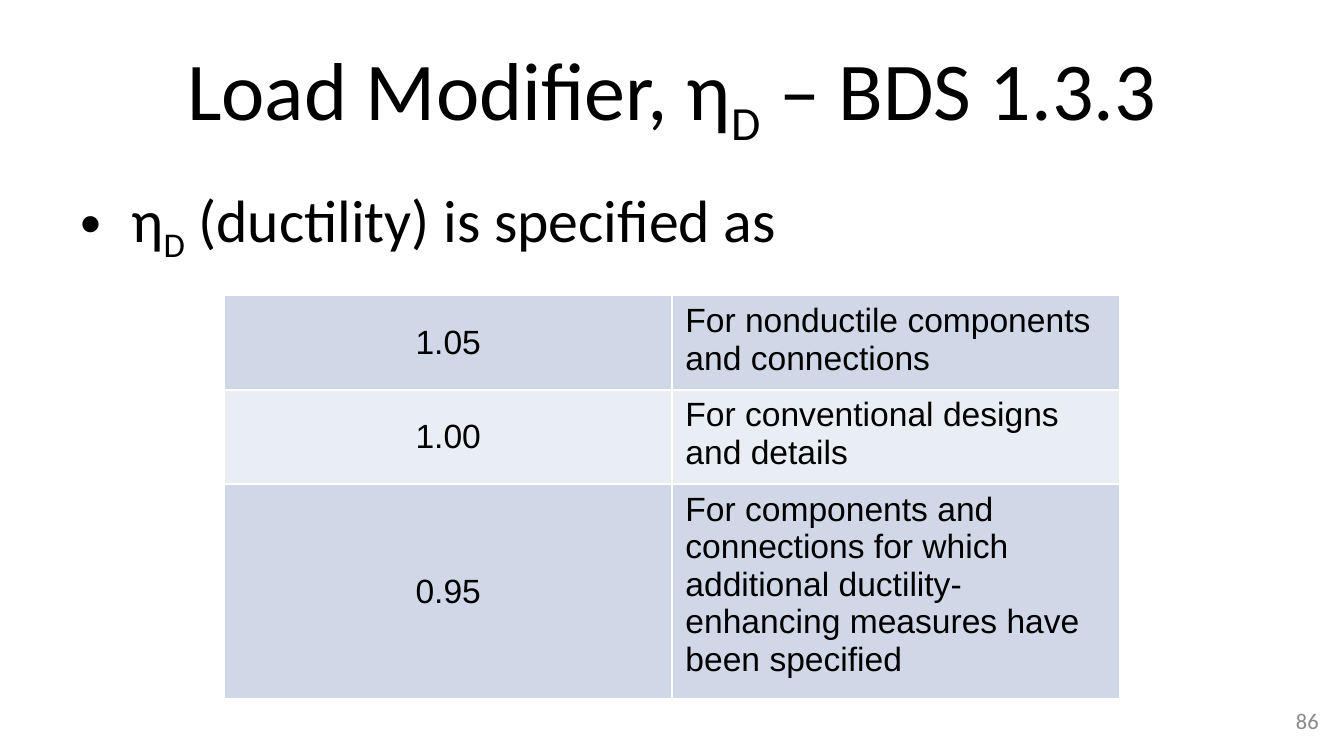
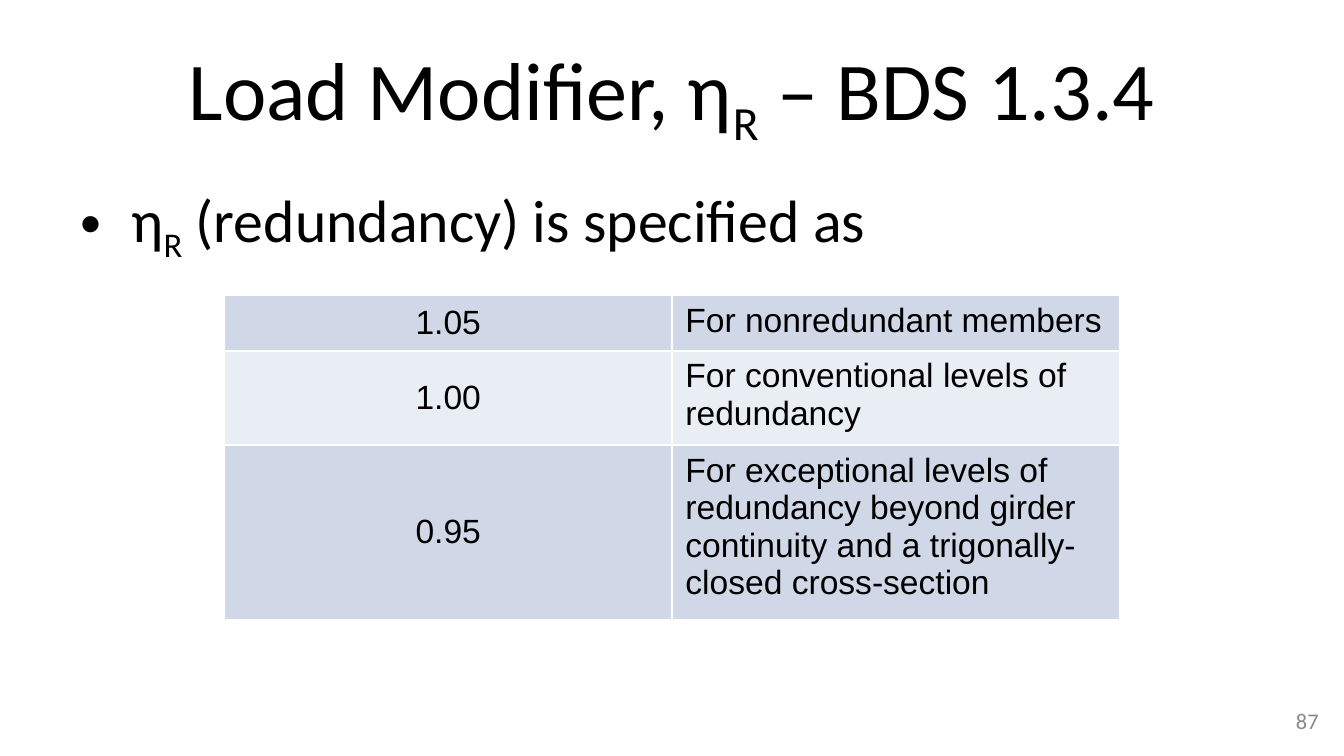
"""Build two slides on load modifiers, each with a title, a bullet and a factor table."""
from dataclasses import dataclass

import pptx
import pptx.dml.color
import pptx.enum.text
import pptx.oxml
import pptx.oxml.ns
import pptx.presentation
import pptx.slide
import pptx.text.text
import pptx.util

Inches = pptx.util.Inches
Align = pptx.enum.text.PP_ALIGN
Anchor = pptx.enum.text.MSO_ANCHOR
Color = pptx.dml.color.RGBColor


@dataclass(frozen=True)
class Theme:
    heading_font: str = "Calibri"
    table_font: str = "Arial"
    title_size: int = 44
    bullet_size: int = 32
    table_size: int = 18
    number_size: int = 12
    ink: str = "000000"
    muted: str = "898989"
    border: str = "FFFFFF"
    bands: tuple[str, str] = ("D0D8E8", "E9EDF4")


@dataclass(frozen=True)
class Frame:
    left: float
    top: float
    width: float
    height: float

    def lengths(self) -> tuple[int, ...]:
        return tuple(Inches(value) for value in (self.left, self.top, self.width, self.height))


@dataclass(frozen=True)
class Modifier:
    subscript: str
    section: str
    quality: str
    factors: tuple[tuple[str, str], ...]


THEME = Theme()
TITLE = Frame(0.5, 0.23, 9, 0.94)
BODY = Frame(0.5, 1.31, 9, 3.71)
NUMBER = Frame(7.58, 5.21, 2.33, 0.3)
ROW_HEIGHT = 0.41
TABLE_LEFT, TABLE_TOP, TABLE_WIDTH = 1.67, 2.2, 6.66
BULLET_INDENT = 0.38
FIRST_NUMBER = 86

MODIFIERS = (
    Modifier("D", "1.3.3", "ductility", (
        ("1.05", "For nonductile components and connections"),
        ("1.00", "For conventional designs and details"),
        ("0.95", "For components and connections for which additional "
                 "ductility-enhancing measures have been specified"),
    )),
    Modifier("R", "1.3.4", "redundancy", (
        ("1.05", "For nonredundant members"),
        ("1.00", "For conventional levels of redundancy"),
        ("0.95", "For exceptional levels of redundancy beyond girder "
                 "continuity and a trigonally-closed cross-section"),
    )),
)


def style(font: pptx.text.text.Font, name: str, size: int, color: str) -> None:
    font.name = name
    font.size = pptx.util.Pt(size)
    font.color.rgb = Color.from_string(color)


def add_para(page: pptx.slide.Slide, frame: Frame, anchor: Anchor, align: Align) -> pptx.text.text._Paragraph:
    box = page.shapes.add_textbox(*frame.lengths())
    box.text_frame.word_wrap = True
    box.text_frame.vertical_anchor = anchor
    para = box.text_frame.paragraphs[0]
    para.alignment = align
    return para


def add_symbol_text(para: pptx.text.text._Paragraph, before: str, subscript: str, after: str) -> None:
    for text in (before, subscript, after):
        span = para.add_run()
        span.text = text
        if text == subscript:
            span._r.get_or_add_rPr().set("baseline", "-25000")


def add_bullet(para: pptx.text.text._Paragraph) -> None:
    properties = para._p.get_or_add_pPr()
    properties.set("marL", str(Inches(BULLET_INDENT)))
    properties.set("indent", str(-Inches(BULLET_INDENT)))
    namespace = pptx.oxml.ns.nsdecls("a")
    properties.append(pptx.oxml.parse_xml(f'<a:buFont {namespace} typeface="Arial"/>'))
    properties.append(pptx.oxml.parse_xml(f'<a:buChar {namespace} char="•"/>'))


def add_factor_table(page: pptx.slide.Slide, factors: tuple[tuple[str, str], ...]) -> None:
    frame = Frame(TABLE_LEFT, TABLE_TOP, TABLE_WIDTH, ROW_HEIGHT * len(factors))
    table = page.shapes.add_table(len(factors), 2, *frame.lengths()).table
    table.first_row = table.horz_banding = False
    for row, texts in enumerate(factors):
        for column, text in enumerate(texts):
            cell = table.cell(row, column)
            properties = cell._tc.get_or_add_tcPr()
            for side in "LRTB":
                properties.append(pptx.oxml.parse_xml(
                    f'<a:ln{side} {pptx.oxml.ns.nsdecls("a")} w="{pptx.util.Pt(1)}">'
                    f'<a:solidFill><a:srgbClr val="{THEME.border}"/></a:solidFill></a:ln{side}>'))
            cell.fill.solid()
            cell.fill.fore_color.rgb = Color.from_string(THEME.bands[row % 2])
            cell.vertical_anchor = Anchor.TOP if column else Anchor.MIDDLE
            para = cell.text_frame.paragraphs[0]
            para.alignment = Align.LEFT if column else Align.CENTER
            span = para.add_run()
            span.text = text
            style(span.font, THEME.table_font, THEME.table_size, THEME.ink)


def add_modifier_page(deck: pptx.presentation.Presentation, modifier: Modifier, number: int) -> None:
    page = deck.slides.add_slide(deck.slide_layouts[6])

    title = add_para(page, TITLE, Anchor.MIDDLE, Align.CENTER)
    add_symbol_text(title, "Load Modifier, η", modifier.subscript, f" – BDS {modifier.section}")
    style(title.font, THEME.heading_font, THEME.title_size, THEME.ink)

    bullet = add_para(page, BODY, Anchor.TOP, Align.LEFT)
    add_symbol_text(bullet, "η", modifier.subscript, f" ({modifier.quality}) is specified as")
    add_bullet(bullet)
    style(bullet.font, THEME.heading_font, THEME.bullet_size, THEME.ink)

    footer = add_para(page, NUMBER, Anchor.MIDDLE, Align.RIGHT)
    footer.text = str(number)
    style(footer.font, THEME.heading_font, THEME.number_size, THEME.muted)

    add_factor_table(page, modifier.factors)


def main() -> None:
    deck = pptx.Presentation()
    deck.slide_width = Inches(10)
    deck.slide_height = deck.slide_width * 9 // 16
    for number, modifier in enumerate(MODIFIERS, FIRST_NUMBER):
        add_modifier_page(deck, modifier, number)
    deck.save("out.pptx")


if __name__ == "__main__":
    main()
